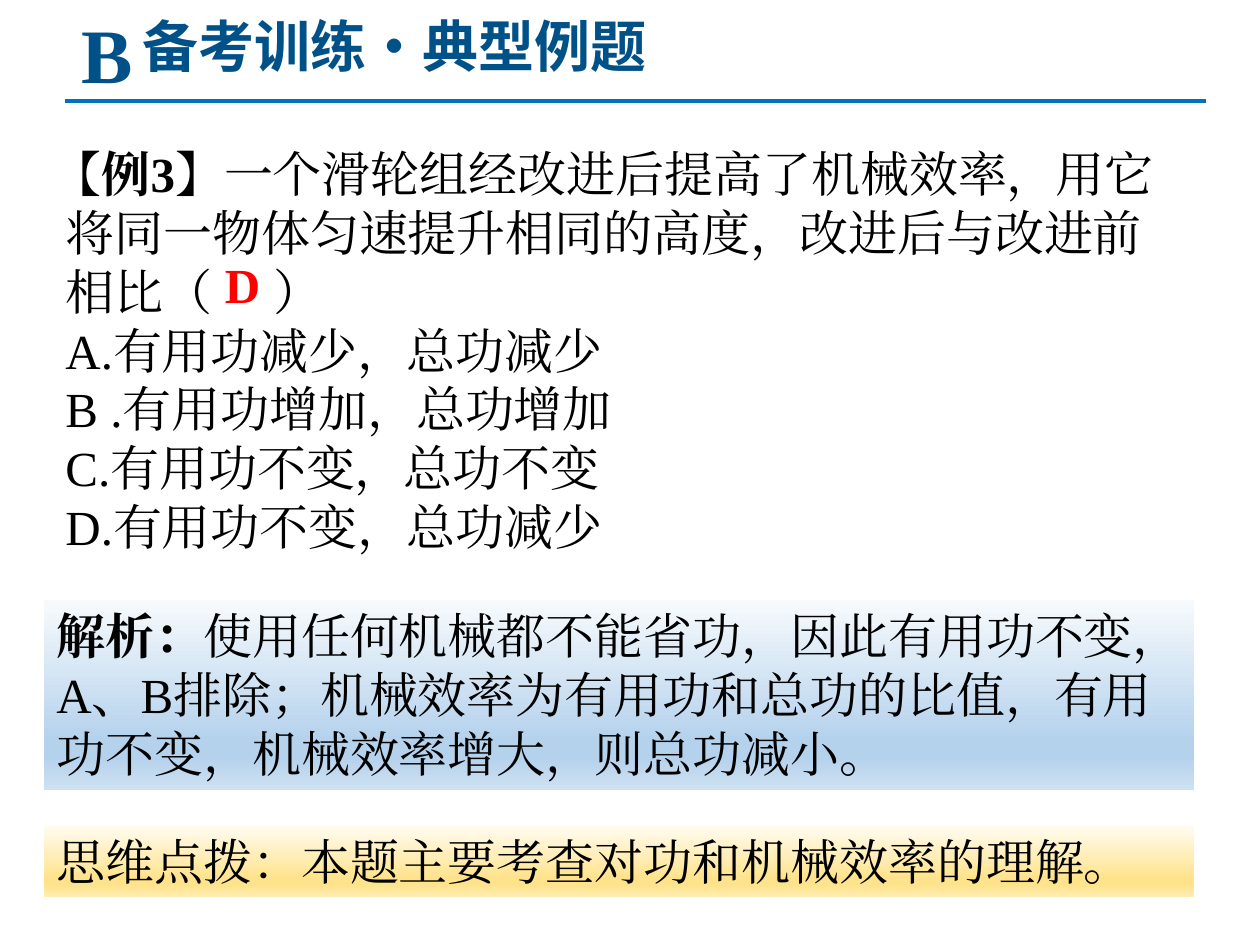
from lxml.etree import SubElement
from pptx import Presentation
from pptx.dml.color import RGBColor as Rgb
from pptx.enum.shapes import MSO_CONNECTOR as Connector, MSO_SHAPE as Shape
from pptx.enum.text import MSO_ANCHOR as Anchor, PP_ALIGN as Align
from pptx.oxml import parse_xml
from pptx.oxml.ns import nsdecls, qn
from pptx.util import Inches, Pt

COLORS = {"text": "000000", "answer": "FF0000", "rule": "0070C0",
          "title": "005188", "outline": "5093CF"}
BLUE_PANEL = ("F7FAFD", "B5D2EC", "B5D2EC", "CEE1F2")
GOLD_PANEL = ("FFFCF2", "FFE38C", "FFE38C", "FFECB2")
STOPS = (0, 74, 83, 100)
LATIN, HAN = "Times New Roman", "Noto Sans CJK SC"


def add_span(para, text, size=28, color="text", bold=False, font=LATIN, outline=None):
    span = para.add_run()
    span.text = text
    span.font.size = Pt(size)
    span.font.bold = bold
    span.font.name = font
    span.font.color.rgb = Rgb.from_string(COLORS[color])
    props = span.font._element
    SubElement(props, qn("a:ea")).set("typeface", font)
    if outline:
        props.insert(0, parse_xml(
            f'<a:ln {nsdecls("a")} w="{Pt(0.83)}"><a:solidFill>'
            f'<a:srgbClr val="{COLORS[outline]}"/></a:solidFill></a:ln>'))


class ExercisePage:
    def __init__(self, deck):
        self.page = deck.slides.add_slide(deck.slide_layouts[6])

    def fill_text(self, box, paras, align=Align.LEFT, anchor=Anchor.TOP,
                  wrap=True, indent=0, before=0, side_margin=0.1, **style):
        frame = box.text_frame
        frame.word_wrap = wrap
        frame.vertical_anchor = anchor
        frame.margin_left = frame.margin_right = Inches(side_margin)
        for index, spans in enumerate(paras):
            para = frame.paragraphs[0] if index == 0 else frame.add_paragraph()
            para.alignment = align
            if before:
                para.space_before = Pt(before)
            if indent and index:
                para._p.get_or_add_pPr().set("marL", str(Inches(indent)))
            for text, bold in spans:
                add_span(para, text, bold=bold, **style)

    def text(self, left, top, width, height, paras, **options):
        box = self.page.shapes.add_textbox(
            Inches(left), Inches(top), Inches(width), Inches(height))
        self.fill_text(box, paras, **options)

    def panel(self, top, height, shades, paras):
        box = self.page.shapes.add_shape(
            Shape.RECTANGLE, Inches(0.35), Inches(top), Inches(9.13), Inches(height))
        box.shadow.inherit = False
        box.line.fill.background()
        box.fill.gradient()
        box.fill.gradient_angle = 270
        stops = box._element.spPr.find(qn("a:gradFill")).find(qn("a:gsLst"))
        for stop in list(stops):
            stops.remove(stop)
        for place, shade in zip(STOPS, shades):
            stop = SubElement(stops, qn("a:gs"), pos=str(place * 1000))
            SubElement(stop, qn("a:srgbClr"), val=shade)
        self.fill_text(box, paras)

    def rule(self, left, right, top):
        line = self.page.shapes.add_connector(
            Connector.STRAIGHT, Inches(left), Inches(top), Inches(right), Inches(top))
        line.line.color.rgb = Rgb.from_string(COLORS["rule"])
        line.line.width = Pt(2.25)
        SubElement(line._element.spPr, qn("a:effectLst"))


def main():
    deck = Presentation()
    deck.slide_width, deck.slide_height = Inches(10), Inches(7.5)
    page = ExercisePage(deck)

    question = [
        "将同一物体匀速提升相同的高度，改进后与改进前",
        "相比（     ）",
        "A.有用功减少，总功减少",
        "B .有用功增加，总功增加",
        "C.有用功不变，总功不变",
        "D.有用功不变，总功减少",
    ]
    opening = [("【", False), ("例3", True),
               ("】一个滑轮组经改进后提高了机械效率，用它", False)]
    page.text(0.42, 1.09, 9.07, 3.4, [opening] + [[(line, False)] for line in question],
              indent=0.1, side_margin=0)
    page.panel(4.76, 1.51, BLUE_PANEL, [[
        ("解析：", True),
        ("使用任何机械都不能省功，因此有用功不变，A、B排除；机械效率为有用功和"
         "总功的比值，有用功不变，机械效率增大，则总功减小。", False)]])
    page.text(1.21, 1.97, 1.43, 0.57, [[("D", True)]], align=Align.CENTER, color="answer")
    page.rule(0.52, 9.57, 0.8)
    page.text(1.03, 0.13, 5.56, 0.46, [[("备考训练·典型例题", True)]],
              anchor=Anchor.MIDDLE, before=10, size=32, color="title", font=HAN)
    page.text(0.55, 0, 0.54, 0.84, [[("B", True)]], align=Align.CENTER, wrap=False,
              size=44, color="title", outline="outline")
    page.panel(6.55, 0.57, GOLD_PANEL,
               [[("思维点拨：本题主要考查对功和机械效率的理解。", False)]])
    deck.save("out.pptx")


if __name__ == "__main__":
    main()
